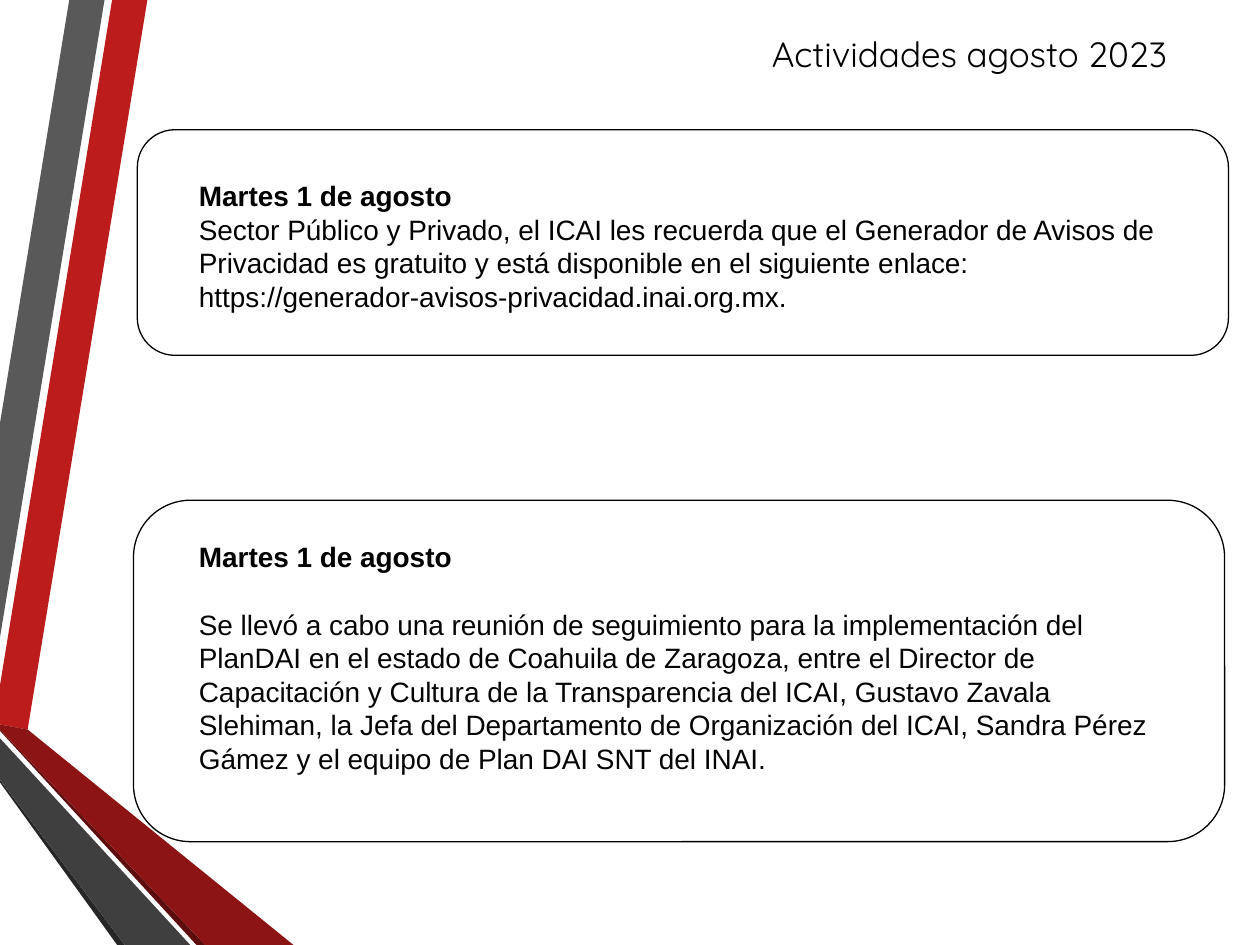
from pptx import Presentation
from pptx.dml.color import RGBColor
from pptx.enum.shapes import MSO_SHAPE as Shape
from pptx.enum.text import MSO_ANCHOR as Anchor, MSO_AUTO_SIZE as AutoSize, PP_ALIGN as Align
from pptx.util import Inches, Pt

BLACK = RGBColor(0x00, 0x00, 0x00)
SOFT_BLACK = RGBColor(0x05, 0x05, 0x05)
RED = RGBColor(0xBC, 0x1C, 0x1C)
DARK_RED = RGBColor(0x8D, 0x14, 0x15)
DEEP_RED = RGBColor(0x5E, 0x0D, 0x0E)
GRAY = RGBColor(0x59, 0x59, 0x59)
DARK_GRAY = RGBColor(0x3F, 0x3F, 0x3F)
DEEP_GRAY = RGBColor(0x26, 0x26, 0x26)

COLUMNS, ROWS = 100, 75
TEXT_LEFT, TEXT_WIDTH = 14.8, 78.8
FRAME_WIDTH = 86.6

RIBBONS = [
    (RED, [(0, 54.4), (0, 57.5), (2.2, 57.9), (11.7, 0), (8.9, 0)]),
    (GRAY, [(8.3, 0), (5.5, 0), (0, 33.6), (0, 50.6)]),
    (DEEP_GRAY, [(0, 61.9), (0, 62.1), (9.3, 75), (9.9, 75)]),
    (DEEP_RED, [(0, 57.9), (0, 58), (15.6, 75), (16.3, 75)]),
    (DARK_RED, [(0, 57.9), (16.3, 75), (23.3, 75), (2.2, 57.9), (0, 57.5)]),
    (DARK_GRAY, [(0, 61.9), (9.9, 75), (15.1, 75), (0, 58.6)]),
]

DATE = "Martes 1 de agosto"
NOTICE = (
    "Sector Público y Privado, el ICAI les recuerda que el Generador de Avisos de "
    "Privacidad es gratuito y está disponible en el siguiente enlace: "
    "https://generador-avisos-privacidad.inai.org.mx."
)
MEETING = (
    "Se llevó a cabo una reunión de seguimiento para la implementación del PlanDAI "
    "en el estado de Coahuila de Zaragoza, entre el Director de Capacitación y "
    "Cultura de la Transparencia del ICAI, Gustavo Zavala Slehiman, la Jefa del "
    "Departamento de Organización del ICAI, Sandra Pérez Gámez y el equipo de "
    "Plan DAI SNT del INAI."
)


class AgendaSlide:
    """Places elements on a grid of COLUMNS by ROWS."""

    title_font, body_font = "Quicksand", "Arial"
    title_size, body_size = Pt(20), Pt(16)

    def __init__(self, prs):
        self.column = prs.slide_width / COLUMNS
        self.row = prs.slide_height / ROWS
        self.slide = prs.slides.add_slide(prs.slide_layouts[5])
        self.shapes = self.slide.shapes

    def point(self, column, row):
        return round(column * self.column), round(row * self.row)

    def area(self, left, top, width, height):
        return self.point(left, top) + self.point(width, height)

    def ribbon(self, color, corners):
        start, *others = [self.point(*corner) for corner in corners]
        builder = self.shapes.build_freeform(*start, scale=1.0)
        builder.add_line_segments(others, close=True)
        band = builder.convert_to_shape()
        band.shadow.inherit = False
        band.fill.solid()
        band.fill.fore_color.rgb = color
        band.line.fill.background()

    def title(self, text, *area):
        heading = self.shapes.title
        heading.left, heading.top, heading.width, heading.height = self.area(*area)
        frame = heading.text_frame
        frame.text = text
        frame.auto_size = AutoSize.NONE
        frame.vertical_anchor = Anchor.TOP
        paragraph = frame.paragraphs[0]
        paragraph.alignment = Align.CENTER
        self.style(paragraph, self.title_font, self.title_size, BLACK)

    def frame(self, left, top, height):
        outline = self.shapes.add_shape(
            Shape.FLOWCHART_ALTERNATE_PROCESS, *self.area(left, top, FRAME_WIDTH, height))
        outline.shadow.inherit = False
        outline.fill.background()
        outline.line.color.rgb = BLACK
        outline.line.width = Pt(0.75)

    def text(self, top, height, *lines):
        """Each line is a tuple of text, colour and bold."""
        box = self.shapes.add_textbox(*self.area(TEXT_LEFT, top, TEXT_WIDTH, height))
        frame = box.text_frame
        frame.word_wrap = True
        for index, (words, color, bold) in enumerate(lines):
            paragraph = frame.add_paragraph() if index else frame.paragraphs[0]
            paragraph.text = words
            self.style(paragraph, self.body_font, self.body_size, color, bold)

    @staticmethod
    def style(paragraph, name, size, color, bold=False):
        font = paragraph.font
        font.name, font.size, font.bold = name, size, bold
        font.color.rgb = color


def main():
    prs = Presentation()
    prs.slide_width, prs.slide_height = Inches(10), Inches(7.5)
    agenda = AgendaSlide(prs)
    for color, corners in RIBBONS:
        agenda.ribbon(color, corners)
    agenda.title("Actividades agosto 2023", 56.3, 2.1, 41.3, 4.4)

    agenda.text(13.7, 11.8, (DATE, BLACK, True), (NOTICE, BLACK, False))
    agenda.frame(10.9, 10.3, 17.9)

    agenda.text(42.3, 6.4, (DATE, BLACK, True))
    agenda.frame(10.6, 39.7, 27.1)
    agenda.text(47.7, 14.5, (MEETING, SOFT_BLACK, False))
    prs.save("out.pptx")


if __name__ == "__main__":
    main()
